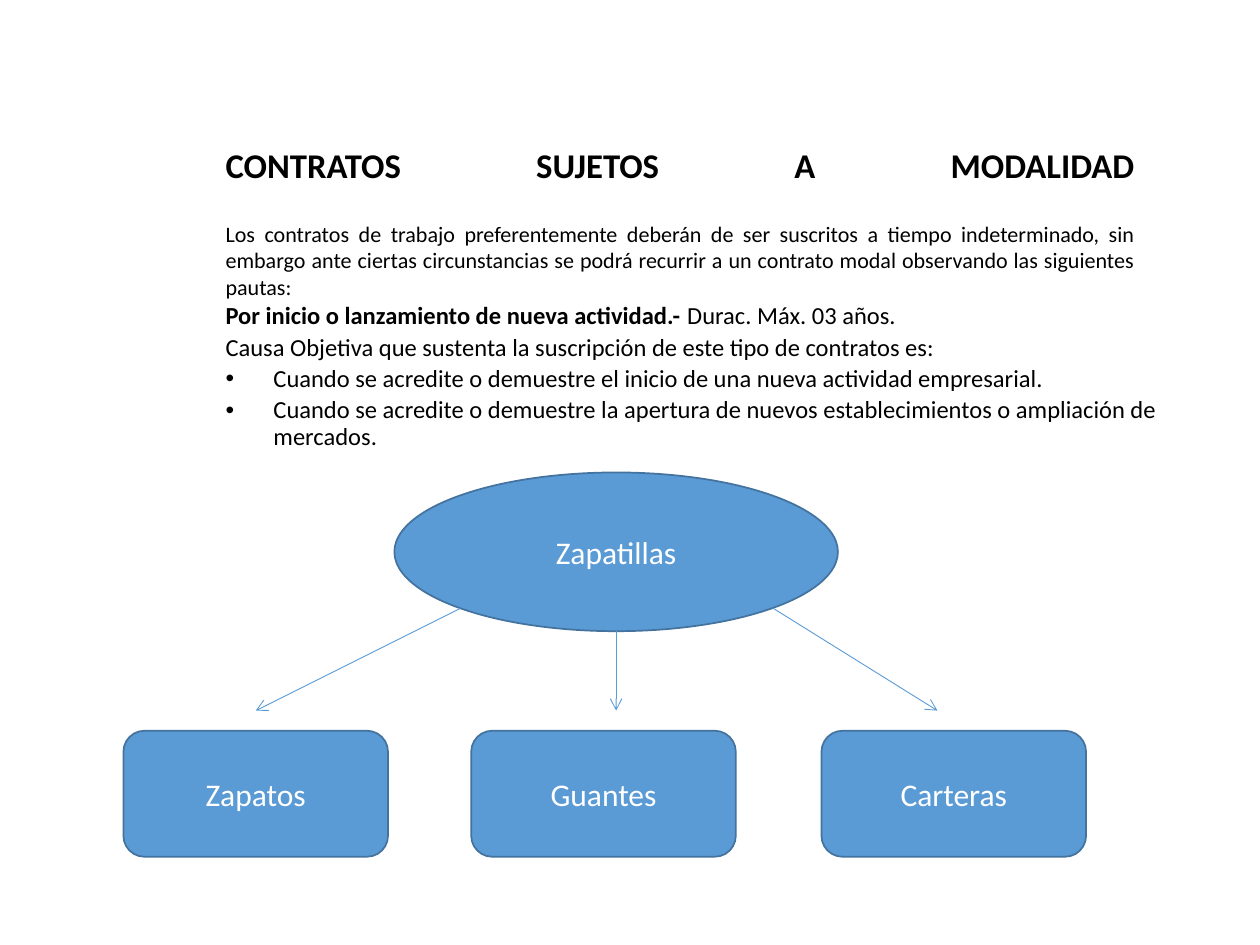
from dataclasses import dataclass

from lxml.etree import SubElement
from pptx import Presentation
from pptx.dml.color import RGBColor
from pptx.enum.shapes import MSO_CONNECTOR, MSO_SHAPE
from pptx.enum.text import MSO_ANCHOR, MSO_AUTO_SIZE, PP_ALIGN
from pptx.oxml.ns import qn
from pptx.util import Inches, Pt


@dataclass(frozen=True)
class Theme:
    font: str = "Calibri"
    text: RGBColor = RGBColor(0x00, 0x00, 0x00)
    light: RGBColor = RGBColor(0xFF, 0xFF, 0xFF)
    fill: RGBColor = RGBColor(0x5B, 0x9B, 0xD5)
    outline: RGBColor = RGBColor(0x43, 0x73, 0x9E)
    heading_size: float = 19.8
    gap_size: float = 16.7
    intro_size: float = 12.6
    body_size: float = 14
    space_size: float = 16
    shape_size: float = 18


THEME = Theme()
HEADING = "CONTRATOS SUJETOS A MODALIDAD"
INTRO = (
    "Los contratos de trabajo preferentemente deberán de ser suscritos a tiempo "
    "indeterminado, sin embargo ante ciertas circunstancias se podrá recurrir a un "
    "contrato modal observando las siguientes pautas:"
)
CAUSE = "Causa Objetiva que sustenta la suscripción de este tipo de contratos es:"
CASES = [
    "Cuando se acredite o demuestre el inicio de una nueva actividad empresarial.",
    "Cuando se acredite o demuestre la apertura de nuevos establecimientos o "
    "ampliación de mercados.",
]
PRODUCTS = [("Zapatos", 0.98), ("Guantes", 3.74), ("Carteras", 6.52)]
ARROWS = [((3.65, 4.83), (2.03, 5.64)), ((4.89, 5.01), (4.89, 5.64)), ((6.14, 4.83), (7.44, 5.64))]


def place(shape, left, top, width, height):
    shape.left, shape.top = Inches(left), Inches(top)
    shape.width, shape.height = Inches(width), Inches(height)


def style_font(font, size, color=THEME.text, bold=False):
    font.name = THEME.font
    font.size = Pt(size)
    font.bold = bold
    font.color.rgb = color


def add_span(para, text, size, bold=False):
    span = para.add_run()
    span.text = text
    style_font(span.font, size, bold=bold)


def add_break(para, size):
    para.add_line_break()
    properties = SubElement(para._p.findall(qn("a:br"))[-1], qn("a:rPr"))
    properties.set("sz", str(round(size * 100)))


def prepare_frame(placeholder):
    frame = placeholder.text_frame
    frame.auto_size = MSO_AUTO_SIZE.NONE
    frame.word_wrap = True
    frame.vertical_anchor = MSO_ANCHOR.TOP
    return frame


def fill_title(title):
    place(title, 1.69, 1.09, 7.41, 1.32)
    para = prepare_frame(title).paragraphs[0]
    para.alignment = PP_ALIGN.JUSTIFY
    add_span(para, HEADING, THEME.heading_size, bold=True)
    add_break(para, THEME.heading_size)
    add_break(para, THEME.gap_size)
    add_span(para, INTRO, THEME.intro_size)


def format_item(para, bullet=None):
    para.line_spacing = 0.9
    properties = para._p.get_or_add_pPr()
    properties.set("marL", str(Inches(0.38)))
    properties.set("indent", str(-Inches(0.38)))
    if bullet:
        SubElement(properties, qn("a:buChar")).set("char", bullet)
    else:
        SubElement(properties, qn("a:buNone"))


def fill_body(body):
    place(body, 1.69, 2.33, 7.66, 1.34)
    frame = prepare_frame(body)
    first = frame.paragraphs[0]
    format_item(first)
    add_span(first, "Por inicio o lanzamiento de nueva actividad.-", THEME.body_size, bold=True)
    add_span(first, " ", THEME.space_size)
    add_span(first, "Durac. Máx. 03 años.", THEME.body_size)
    for text, bullet in [(CAUSE, None)] + [(case, "•") for case in CASES]:
        para = frame.add_paragraph()
        format_item(para, bullet)
        para.text = text
        style_font(para.font, THEME.body_size)


def add_node(page, kind, text, left, top, width, height):
    node = page.shapes.add_shape(kind, Inches(left), Inches(top), Inches(width), Inches(height))
    node.shadow.inherit = False
    node.fill.solid()
    node.fill.fore_color.rgb = THEME.fill
    node.line.color.rgb = THEME.outline
    node.line.width = Pt(1)
    node.text_frame.vertical_anchor = MSO_ANCHOR.MIDDLE
    para = node.text_frame.paragraphs[0]
    para.text = text
    para.alignment = PP_ALIGN.CENTER
    style_font(para.font, THEME.shape_size, THEME.light)


def add_arrow(page, start, end):
    points = [Inches(value) for value in start + end]
    arrow = page.shapes.add_connector(MSO_CONNECTOR.STRAIGHT, *points)
    arrow.line.color.rgb = THEME.fill
    arrow.line.width = Pt(0.5)
    SubElement(arrow.line._get_or_add_ln(), qn("a:tailEnd")).set("type", "arrow")
    SubElement(arrow._element.spPr, qn("a:effectLst"))


def main():
    deck = Presentation()
    deck.slide_width, deck.slide_height = Inches(10), Inches(7.5)
    page = deck.slides.add_slide(deck.slide_layouts[1])
    fill_title(page.shapes.title)
    fill_body(page.placeholders[1])
    add_node(page, MSO_SHAPE.OVAL, "Zapatillas", 3.13, 3.75, 3.52, 1.26)
    for name, left in PRODUCTS:
        add_node(page, MSO_SHAPE.ROUNDED_RECTANGLE, name, left, 5.8, 2.1, 1)
    for start, end in ARROWS:
        add_arrow(page, start, end)
    deck.save("out.pptx")


if __name__ == "__main__":
    main()
